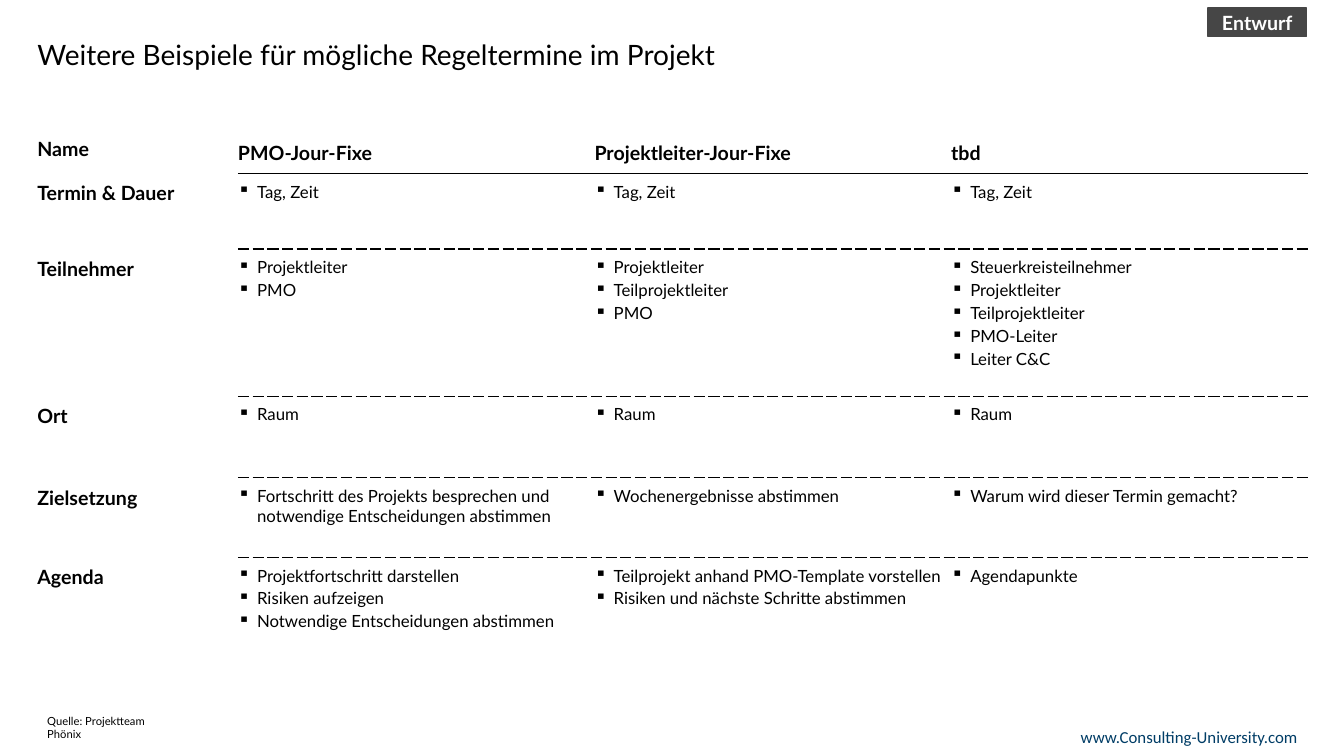
"""Build the slide with further examples of regular project meetings."""
from dataclasses import dataclass, field
from typing import Any

from lxml.etree import SubElement as Sub
from pptx import Presentation
from pptx.dml.color import RGBColor as Rgb
from pptx.enum.shapes import MSO_SHAPE as Form
from pptx.enum.text import MSO_ANCHOR as Anchor, PP_ALIGN as Align
from pptx.oxml.ns import qn
from pptx.util import Inches, Pt

BLACK, WHITE, GREY, NAVY = "000000", "FFFFFF", "464646", "003D66"
LEFT, WIDE, SIDE = 0.37, 12.6, 1.99
BOLD = {"size": Pt(14), "bold": True, "name": "Lato"}
BODY = {"size": Pt(12), "bold": False, "name": "Lato"}
INSET = {"margin_left": 0, "margin_top": Inches(0.08),
         "margin_right": Inches(0.06), "margin_bottom": Inches(0.04)}


@dataclass
class Label:
    text: str
    box: tuple[float, float, float, float]
    font: dict[str, Any]
    color: str = BLACK
    fill: str = ""
    frame: dict[str, Any] = field(default_factory=dict)
    para: dict[str, Any] = field(default_factory=dict)


@dataclass
class Row:
    name: str
    high: float
    items: list[list[str]]


LABELS = [
    Label("www.Consulting-University.com", (9.57, 7.16, 3.4, 0.3),
          {"size": Pt(12), "name": "Calibri"}, NAVY,
          frame={"vertical_anchor": Anchor.MIDDLE},
          para={"alignment": Align.RIGHT}),
    Label("Weitere Beispiele für mögliche Regeltermine im Projekt",
          (LEFT, 0.36, WIDE, 0.59), {"size": Pt(20), "name": "Lato"},
          frame={"margin_left": 0, "margin_right": 0},
          para={"line_spacing": 0.9}),
    Label("Entwurf", (11.98, 0.08, 0.98, 0.28), BOLD, WHITE, GREY,
          {"vertical_anchor": Anchor.MIDDLE}, {"alignment": Align.CENTER}),
    Label("Quelle: Projektteam Phönix", (LEFT, 7.16, 1.51, 0.24),
          {"size": Pt(8), "name": "Lato"},
          frame={"vertical_anchor": Anchor.BOTTOM,
                 "margin_right": Inches(0.2)}),
]

ROWS = [
    Row("Name", 0.44, [["PMO-Jour-Fixe"], ["Projektleiter-Jour-Fixe"], ["tbd"]]),
    Row("Termin & Dauer", 0.75, [["Tag, Zeit"]] * 3),
    Row("Teilnehmer", 1.46, [
        ["Projektleiter", "PMO"],
        ["Projektleiter", "Teilprojektleiter", "PMO"],
        ["Steuerkreisteilnehmer", "Projektleiter", "Teilprojektleiter",
         "PMO-Leiter", "Leiter C&C"]]),
    Row("Ort", 0.81, [["Raum"]] * 3),
    Row("Zielsetzung", 0.79, [
        ["Fortschritt des Projekts besprechen und "
         "notwendige Entscheidungen abstimmen"],
        ["Wochenergebnisse abstimmen"],
        ["Warum wird dieser Termin gemacht?"]]),
    Row("Agenda", 1.38, [
        ["Projektfortschritt darstellen", "Risiken aufzeigen",
         "Notwendige Entscheidungen abstimmen"],
        ["Teilprojekt anhand PMO-Template vorstellen",
         "Risiken und nächste Schritte abstimmen"],
        ["Agendapunkte"]]),
]


def tint(code: str) -> Rgb:
    return Rgb.from_string(code)


def apply(target: Any, values: dict[str, Any]) -> None:
    for key, value in values.items():
        setattr(target, key, value)


def style(para: Any, font: dict[str, Any], color: str) -> None:
    apply(para.font, font)
    para.font.color.rgb = tint(color)


def paint(shape: Any, color: str) -> None:
    shape.fill.solid()
    shape.fill.fore_color.rgb = tint(color)


def add_label(slide: Any, label: Label) -> None:
    box = [Inches(size) for size in label.box]
    if label.fill:
        shape = slide.shapes.add_shape(Form.RECTANGLE, *box)
        shape.shadow.inherit = False
        paint(shape, label.fill)
        shape.line.color.rgb = tint(label.fill)
        shape.line.width = Pt(1)
    else:
        shape = slide.shapes.add_textbox(*box)
    frame = shape.text_frame
    apply(frame, {"word_wrap": True, **label.frame})
    frame.text = label.text
    para = frame.paragraphs[0]
    apply(para, label.para)
    style(para, label.font, label.color)


def add_edge(cell: Any, side: str, color: str = "", dash: str = "solid") -> None:
    line = Sub(cell._tc.get_or_add_tcPr(), qn(f"a:ln{side}"), w=str(Pt(1)))
    if color:
        solid = Sub(line, qn("a:solidFill"))
        Sub(solid, qn("a:srgbClr"), val=color)
        Sub(line, qn("a:prstDash"), val=dash)
    else:
        Sub(line, qn("a:noFill"))


def add_bullet(para: Any) -> None:
    props = para._p.get_or_add_pPr()
    props.set("marL", str(Inches(0.19)))
    props.set("indent", str(-Inches(0.19)))
    Sub(props, qn("a:buChar"), char="▪")


def fill_cell(cell: Any, lines: list[str], row: int, col: int) -> None:
    apply(cell, INSET)
    if row == 0 and col:
        cell.vertical_anchor = Anchor.MIDDLE
    plain = row == 0 or col == 0
    cell.text_frame.text = "\n".join(lines)
    for spot, para in enumerate(cell.text_frame.paragraphs):
        if not plain:
            add_bullet(para)
        if spot:
            para.space_before = Pt(2)
        style(para, BOLD if plain else BODY, BLACK)
    add_edge(cell, "L")
    add_edge(cell, "R")
    for side, rule in (("T", row), ("B", row + 1)):
        inner = col > 0 and 0 < rule < len(ROWS)
        add_edge(cell, side, BLACK if inner else WHITE,
                 "sysDash" if inner and rule > 1 else "solid")
    paint(cell, WHITE)


def add_grid(slide: Any) -> None:
    count = len(ROWS[0].items)
    high = sum(row.high for row in ROWS)
    table = slide.shapes.add_table(len(ROWS), count + 1, Inches(LEFT),
                                   Inches(1.28), Inches(WIDE), Inches(high)).table
    apply(table, {"first_row": False, "horz_banding": False})
    for col, column in enumerate(table.columns):
        column.width = Inches((WIDE - SIDE) / count if col else SIDE)
    for at, row in enumerate(ROWS):
        table.rows[at].height = Inches(row.high)
        for col, lines in enumerate([[row.name], *row.items]):
            fill_cell(table.cell(at, col), lines, at, col)


def main() -> None:
    deck = Presentation()
    apply(deck, {"slide_width": Inches(13.33), "slide_height": Inches(7.5)})
    slide = deck.slides.add_slide(deck.slide_layouts[6])
    add_grid(slide)
    for label in LABELS:
        add_label(slide, label)
    deck.save("out.pptx")


if __name__ == "__main__":
    main()
